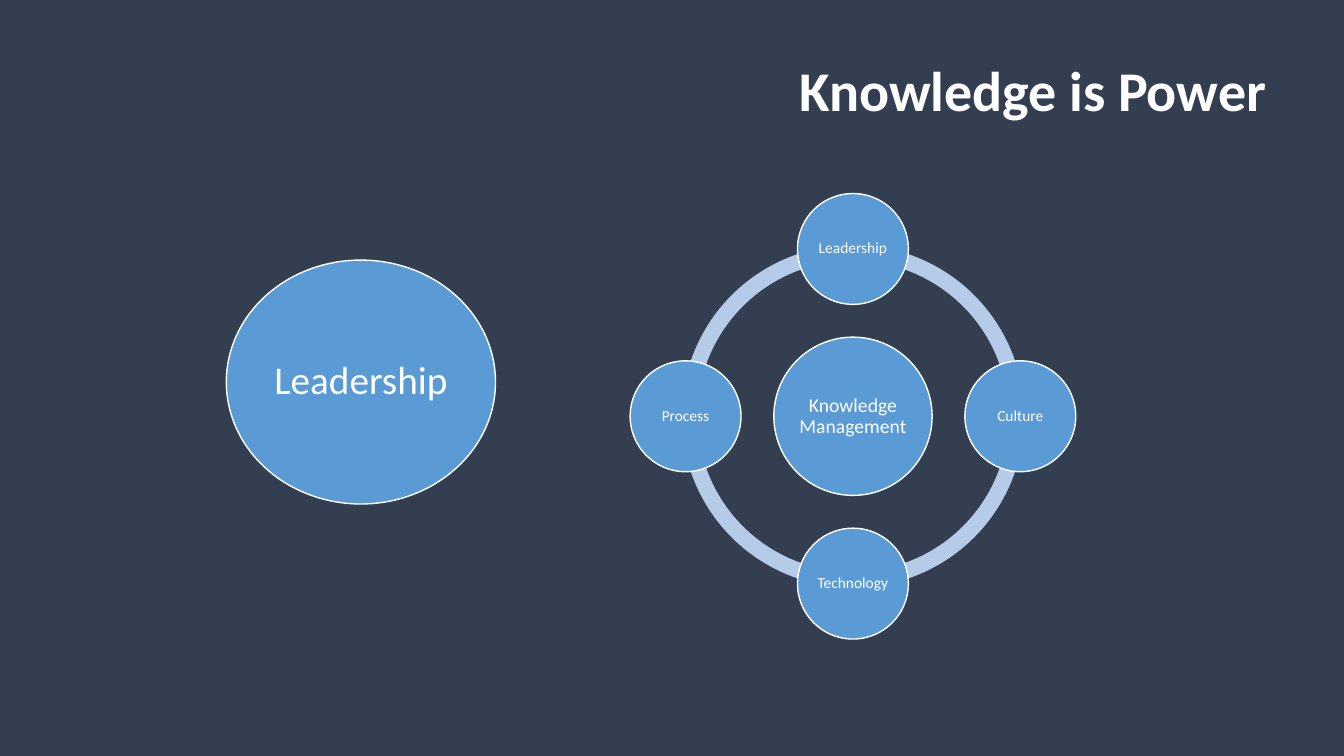
import pptx
import pptx.util
import pptx.dml.color
import pptx.enum.shapes
import pptx.enum.text

Inches = pptx.util.Inches
Pt = pptx.util.Pt
Shapes = pptx.enum.shapes.MSO_SHAPE
Align = pptx.enum.text.PP_ALIGN
Anchor = pptx.enum.text.MSO_ANCHOR


def color(value):
    return pptx.dml.color.RGBColor.from_string(value)


def add_circle(label, center_x, center_y, width, height, size):
    circle = page.shapes.add_shape(
        Shapes.OVAL, Inches(center_x - width / 2), Inches(center_y - height / 2),
        Inches(width), Inches(height))
    circle.shadow.inherit = False
    circle.fill.solid()
    circle.fill.fore_color.rgb = color("5B9BD5")
    circle.line.color.rgb = color("FFFFFF")
    circle.line.width = Pt(1)
    frame = circle.text_frame
    frame.word_wrap = True
    frame.vertical_anchor = Anchor.MIDDLE
    frame.margin_left = frame.margin_right = Inches(0.02)
    frame.margin_top = frame.margin_bottom = Inches(0.02)
    para = frame.paragraphs[0]
    para.text = label
    para.alignment = Align.CENTER
    para.line_spacing = 0.9
    para.font.name = "Calibri"
    para.font.size = Pt(size)
    para.font.color.rgb = color("FFFFFF")


deck = pptx.Presentation()
deck.slide_width = Inches(13.33)
deck.slide_height = Inches(7.5)
page = deck.slides.add_slide(deck.slide_layouts[5])
page.background.fill.solid()
page.background.fill.fore_color.rgb = color("333F50")

title = page.shapes.title
title.left, title.top = Inches(3.44), Inches(0.3)
title.width, title.height = Inches(9.22), Inches(1.25)
title.text_frame.vertical_anchor = Anchor.MIDDLE
para = title.text_frame.paragraphs[0]
para.text = "Knowledge is Power"
para.alignment = Align.RIGHT
para.line_spacing = 0.9
para.font.name = "Calibri"
para.font.size = Pt(40)
para.font.bold = True
para.font.color.rgb = color("FFFFFF")

hub_x, hub_y = 8.46, 4.13
ring_size = 3.4
orbit = 1.66
quarter_turn = 54

for quarter in range(4):
    arc = page.shapes.add_shape(
        Shapes.BLOCK_ARC, Inches(hub_x - ring_size / 2), Inches(hub_y - ring_size / 2),
        Inches(ring_size), Inches(ring_size))
    arc.adjustments[0] = quarter * quarter_turn
    arc.adjustments[1] = (quarter + 1) % 4 * quarter_turn
    arc.adjustments[2] = 0.046
    arc.shadow.inherit = False
    arc.fill.solid()
    arc.fill.fore_color.rgb = color("B5CBE7")
    arc.line.fill.background()

add_circle("Knowledge Management", hub_x, hub_y, 1.57, 1.57, 14)
satellites = [("Leadership", 0, -1), ("Culture", 1, 0), ("Technology", 0, 1), ("Process", -1, 0)]
for label, step_x, step_y in satellites:
    add_circle(label, hub_x + step_x * orbit, hub_y + step_y * orbit, 1.1, 1.1, 11)

add_circle("Leadership", 3.58, 3.79, 2.67, 2.42, 28)

deck.save("out.pptx")
